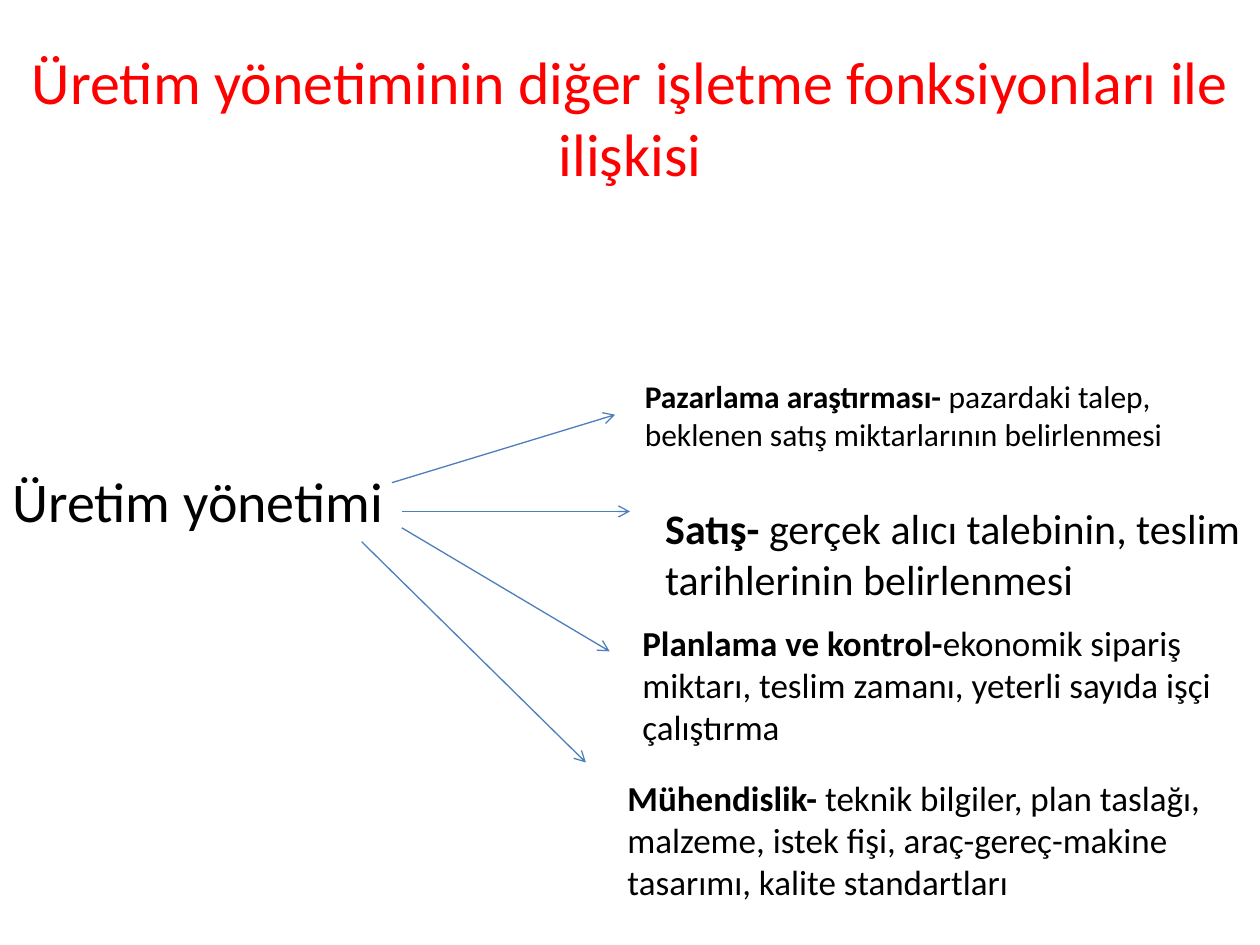
from dataclasses import dataclass

from lxml import etree
from pptx import Presentation
from pptx.dml.color import RGBColor
from pptx.enum.shapes import MSO_CONNECTOR
from pptx.enum.text import MSO_ANCHOR, MSO_AUTO_SIZE, PP_ALIGN
from pptx.oxml.ns import qn
from pptx.util import Cm, Pt

STRAIGHT = MSO_CONNECTOR.STRAIGHT
MIDDLE, TOP = MSO_ANCHOR.MIDDLE, MSO_ANCHOR.TOP
NO_FIT = MSO_AUTO_SIZE.NONE
GROW = MSO_AUTO_SIZE.SHAPE_TO_FIT_TEXT
CENTER = PP_ALIGN.CENTER

RED = RGBColor(0xFF, 0x00, 0x00)
BLACK = RGBColor(0x00, 0x00, 0x00)
BLUE = RGBColor(0x4B, 0x7E, 0xBC)
FONT = "Calibri"

TITLE = "Üretim yönetiminin diğer işletme fonksiyonları ile ilişkisi"
SOURCE = "Üretim yönetimi"


@dataclass(frozen=True)
class BusinessFunction:
    name: str
    role: str
    size: float
    left: float
    top: float
    width: float
    height: float


@dataclass(frozen=True)
class Arrow:
    start: tuple[float, float]
    end: tuple[float, float]


FUNCTIONS = [
    BusinessFunction("Pazarlama araştırması- ",
                     "pazardaki talep, beklenen satış miktarlarının belirlenmesi",
                     18, 12.75, 7.47, 12.7, 1.8),
    BusinessFunction("Satış- ",
                     "gerçek alıcı talebinin, teslim tarihlerinin belirlenmesi",
                     24, 13.16, 10.01, 12.29, 2.31),
    BusinessFunction("Planlama ve kontrol-",
                     "ekonomik sipariş miktarı, teslim zamanı, yeterli sayıda işçi çalıştırma",
                     20, 12.7, 12.4, 12.7, 2.82),
    BusinessFunction("Mühendislik- ",
                     "teknik bilgiler, plan taslağı, malzeme, istek fişi, "
                     "araç-gereç-makine tasarımı, kalite standartları",
                     20, 12.4, 15.52, 12.7, 2.82),
]

ARROWS = [
    Arrow((8.1, 10.31), (12.7, 10.31)),
    Arrow((7.9, 9.73), (12.4, 8.36)),
    Arrow((8.1, 10.64), (12.29, 13.13)),
    Arrow((7.29, 10.92), (11.81, 15.37)),
]


def apply_format(target, values: dict) -> None:
    for attribute, value in values.items():
        setattr(target, attribute, value)


def add_run(paragraph, text: str, size: float, color: RGBColor = BLACK,
            bold: bool = False) -> None:
    run = paragraph.add_run()
    run.text = text
    apply_format(run.font, {"name": FONT, "size": Pt(size), "bold": bold})
    run.font.color.rgb = color


def add_text_box(slide, left: float, top: float, width: float, height: float,
                 fit: MSO_AUTO_SIZE):
    box = slide.shapes.add_textbox(Cm(left), Cm(top), Cm(width), Cm(height))
    apply_format(box.text_frame, {
        "word_wrap": True, "auto_size": fit, "vertical_anchor": TOP})
    return box.text_frame.paragraphs[0]


def add_title(slide) -> None:
    title = slide.shapes.title
    apply_format(title, {
        "left": Cm(0), "top": Cm(0.76), "width": Cm(25.4), "height": Cm(3.18)})
    apply_format(title.text_frame, {
        "word_wrap": True, "auto_size": NO_FIT, "vertical_anchor": MIDDLE})
    paragraph = title.text_frame.paragraphs[0]
    paragraph.alignment = CENTER
    add_run(paragraph, TITLE, 34.2, RED)


def add_arrow(slide, arrow: Arrow) -> None:
    points = [Cm(value) for value in (*arrow.start, *arrow.end)]
    connector = slide.shapes.add_connector(STRAIGHT, *points)
    connector.line.width = Pt(0.75)
    connector.line.color.rgb = BLUE
    outline = connector.line._get_or_add_ln()
    etree.SubElement(outline, qn("a:tailEnd"), type="arrow")
    etree.SubElement(outline.getparent(), qn("a:effectLst"))


def add_function(slide, function: BusinessFunction) -> None:
    paragraph = add_text_box(slide, function.left, function.top,
                             function.width, function.height, GROW)
    add_run(paragraph, function.name, function.size, bold=True)
    add_run(paragraph, function.role, function.size)


def main() -> None:
    presentation = Presentation()
    apply_format(presentation, {"slide_width": Cm(25.4), "slide_height": Cm(19.05)})
    title_only = presentation.slide_layouts.get_by_name("Title Only")
    slide = presentation.slides.add_slide(title_only)
    add_title(slide)
    add_run(add_text_box(slide, 0, 9.28, 8.1, 1.63, NO_FIT), SOURCE, 32)
    for arrow in ARROWS:
        add_arrow(slide, arrow)
    for function in FUNCTIONS:
        add_function(slide, function)
    presentation.save("out.pptx")


if __name__ == "__main__":
    main()
